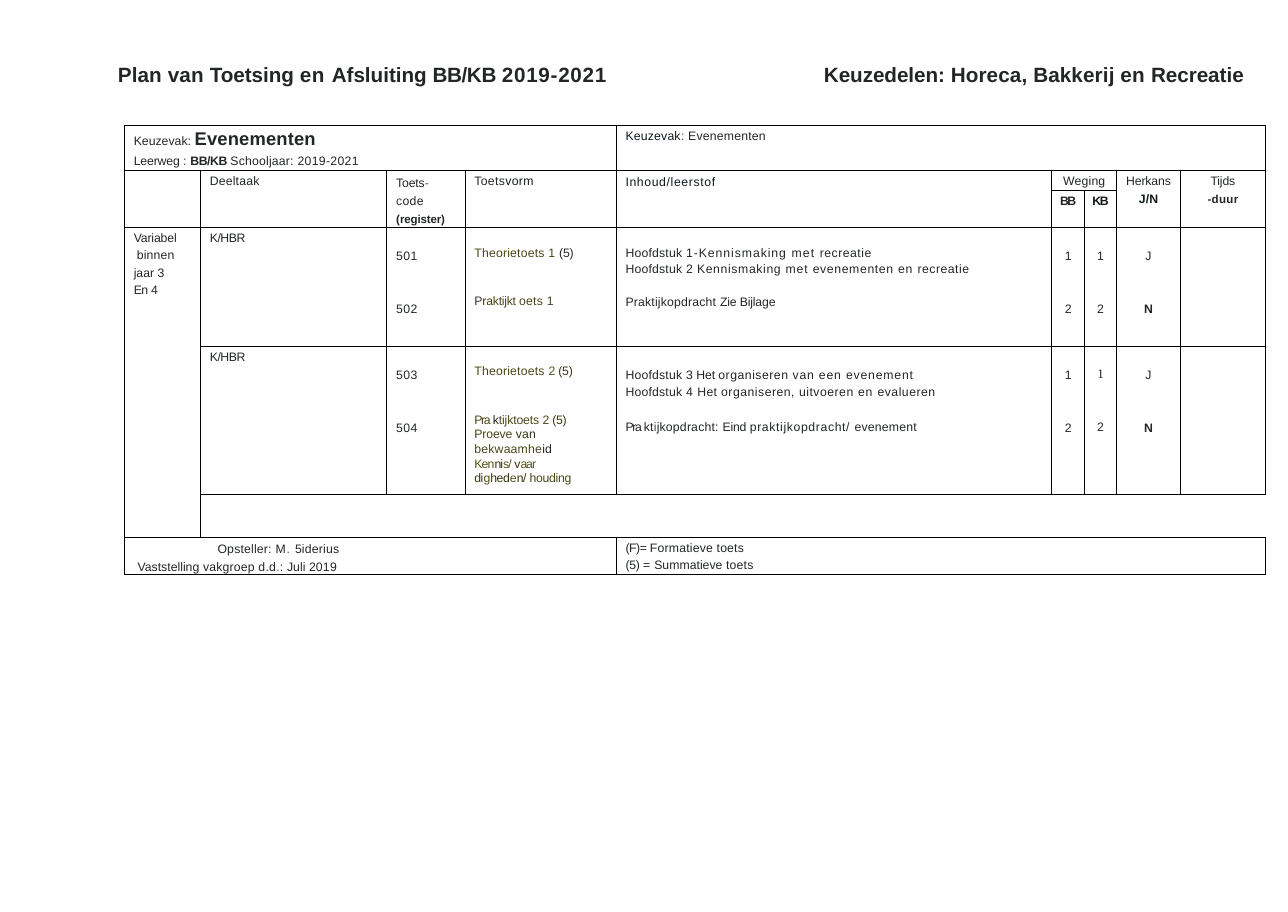
from dataclasses import dataclass

from lxml import etree
from pptx import Presentation
from pptx.dml.color import RGBColor
from pptx.enum import text
from pptx.oxml import ns
from pptx.util import Pt

INK, OLIVE, MOSS, DARK = "232626", "484618", "565416", "383411"
SLATE, STEEL, GREY, NAVY = "2A3446", "3F526D", "4B4B49", "11181C"
LEFT, CENTER = text.PP_ALIGN.LEFT, text.PP_ALIGN.CENTER
COLUMNS = [49.68, 121.68, 51.12, 98.7, 284.4, 21.4, 20.88, 41.76, 55.44]
ROWS = [29.52, 12.96, 23.76, 77.76, 96.6, 28.3, 24.48]
MERGES = [(0, 0, 0, 3), (0, 4, 0, 8), (1, 5, 1, 6), (3, 0, 5, 0),
          (5, 1, 5, 8), (6, 0, 6, 3), (6, 4, 6, 8)]
MERGES += [(1, column, 2, column) for column in (0, 1, 2, 3, 4, 7, 8)]
HEAD, PAIR_TOP, PAIR_GAP = 2.2, 14.4, 25.4


@dataclass
class Span:
    words: str
    spacing: float = 0
    color: str = INK
    bold: bool = False
    size: float = 8
    font: str = "Arial"


@dataclass
class Line:
    gap: float
    spans: list
    indent: float = 0


def line(gap, *spans, indent=0):
    return Line(gap, [Span(*span) for span in spans], indent)


def rgb(color):
    return RGBColor.from_string(color)


def write_line(para, item, align=LEFT):
    para.alignment = align
    if item.indent:
        para._p.get_or_add_pPr().set("marL", str(Pt(item.indent)))
    for part in item.spans:
        span = para.add_run()
        span.text = part.words
        span.font.name, span.font.size = part.font, Pt(part.size)
        span.font.bold = part.bold
        span.font.color.rgb = rgb(part.color)
        span._r.get_or_add_rPr().set("spc", str(round(part.spacing * 100)))


def write_heading(shape, box, item):
    shape.left, shape.top, shape.width, shape.height = (Pt(side) for side in box)
    frame = shape.text_frame
    frame.word_wrap = True
    frame.auto_size = text.MSO_AUTO_SIZE.NONE
    frame.vertical_anchor = text.MSO_ANCHOR.TOP
    frame.margin_left = frame.margin_right = frame.margin_bottom = 0
    frame.margin_top = Pt(item.gap)
    para = frame.paragraphs[0]
    para.line_spacing = 1.0
    para.space_before = Pt(0)
    write_line(para, item)


def draw_headings(slide, box):
    left, top, width, height = box
    bold = (INK, True, 13.5)
    write_heading(slide.shapes.title, (left, top, 330, height), line(
        1, ("Plan van ", 0.1, *bold), ("Toetsing ", 0, *bold), ("en ", 0.5, *bold),
        ("Afsluiting ", 0, *bold), ("BB/KB ", -0.2, *bold), ("2019-2021", 0.5, *bold)))
    right_box = (left + width - 281, top, 281, height)
    write_heading(slide.shapes.add_textbox(0, 0, 0, 0), right_box, line(
        1, ("Keuzedelen: ", 0, *bold), ("Horeca, Bakkerij en ", 0.1, *bold),
        ("Recreatie", 0, *bold)))


def set_borders(cell, open_right):
    properties = cell._tc.get_or_add_tcPr()
    for side in ("lnL", "lnR", "lnT", "lnB"):
        border = etree.SubElement(properties, ns.qn("a:" + side), w=str(Pt(0.75)))
        if side == "lnR" and open_right:
            etree.SubElement(border, ns.qn("a:noFill"))
        else:
            fill = etree.SubElement(border, ns.qn("a:solidFill"))
            etree.SubElement(fill, ns.qn("a:srgbClr"), val="000000")


def fill_cell(table, row, column, lines, align=LEFT):
    """Write the lines; the first gap is the cell's top margin."""
    cell = table.cell(row, column)
    cell.margin_top = Pt(lines[0].gap)
    cell.margin_left = Pt(6 if align == LEFT else 0)
    frame = cell.text_frame
    for index, item in enumerate(lines):
        para = frame.add_paragraph() if index else frame.paragraphs[0]
        para.space_before = Pt(item.gap if index else 0)
        write_line(para, item, align)


def fill_header(table):
    fill_cell(table, 0, 0, [
        line(HEAD, ("Keuzevak: ",), ("Evenementen", 0.1, INK, True, 12)),
        line(3, ("Leerweg ", -0.1), (": ", 0.1, SLATE), ("BB/KB ", -0.3, INK, True),
             ("Schooljaar: ", 0.1), ("2019-2021", 0.2))])
    fill_cell(table, 0, 4, [line(HEAD, ("Keuzevak", 0.1, NAVY), (": ", 0.1, STEEL),
                                 ("Evenementen", 0.1))])
    fill_cell(table, 1, 1, [line(HEAD, ("Deeltaak", 0.1))])
    fill_cell(table, 1, 2, [
        line(3.4, ("Toets", -0.1), ("-", -0.1, STEEL)),
        line(2.8, ("c", 0.2, SLATE), ("ode", 0.2)),
        line(3.4, ("(", 0, INK, True, 7.5), ("register", -0.1, INK, True, 7.5),
             (")", 0, INK, True, 7.5))])
    fill_cell(table, 1, 3, [line(HEAD, ("Toets", 0.2), ("vorm", 0.2, NAVY))])
    fill_cell(table, 1, 4, [line(2.7, ("Inhoud/leerstof", 0.4, NAVY))])
    fill_cell(table, 1, 5, [line(HEAD, ("Weging", 0.1))], CENTER)
    fill_cell(table, 2, 5, [line(HEAD, ("BB", -1, INK, True))], CENTER)
    fill_cell(table, 2, 6, [line(HEAD, ("KB", -0.8, NAVY, True))], CENTER)
    fill_cell(table, 1, 7, [line(HEAD, ("Herkans", -0.1)),
                            line(2.8, ("J/N", 0.1, NAVY, True))], CENTER)
    fill_cell(table, 1, 8, [line(HEAD, ("Tijds", -0.1)),
                            line(3, ("-", 0.2, SLATE, True, 7.5),
                                 ("duur", 0.2, INK, True, 7.5))], CENTER)


def fill_tests(table):
    fill_cell(table, 3, 0, [
        line(2.6, ("Variabel", -0.1)), line(2.4, ("binnen", 0.1), indent=2),
        line(2.4, ("jaar ",), ("3", 0.1)), line(2.4, ("En ", -0.4), ("4", -0.3))])
    for row, codes in ((3, ("501", "502")), (4, ("503", "504"))):
        fill_cell(table, row, 1, [line(2.9, ("K/HBR", -0.3))])
        fill_cell(table, row, 2, [line(PAIR_TOP, (codes[0], 0.3)),
                                  line(PAIR_GAP, (codes[1], 0.3))])
        for column, first, second in ((5, "1", "2"), (6, "1", "2"), (7, "J", "N")):
            serif = (row, column) == (4, 6)
            style = (8.5, "Times New Roman") if serif else (8, "Arial")
            fill_cell(table, row, column, [
                line(13.6 if serif else PAIR_TOP, (first, 0, INK, False, *style)),
                line(PAIR_GAP, (second, 0, INK, second == "N"))], CENTER)
    fill_cell(table, 3, 3, [
        line(12.4, ("Theorietoets 1 ", 0.1, OLIVE), ("(5)", -0.1)),
        line(22.6, ("Pr", -0.2, "363633"), ("aktijkt ", -0.2, OLIVE),
             ("oets ", 0.1, OLIVE), ("1", -0.6, OLIVE))])
    fill_cell(table, 3, 4, [
        line(12.4, ("Hoofdstuk ", 0.1), ("1-Kennismaking ", 0.6), ("met ", 0.7),
             ("recreatie", 0.3)),
        line(1.3, ("Hoofdstuk ", 0.1), ("2 ", 0.2), ("Kennismaking ", 0.4), ("met ", 0.5),
             ("evenementen ", 0.4), ("en ", 0.5), ("recreatie", 0.3)),
        line(12.8, ("Praktijkopdracht ", 0.1), ("Zie ", -0.2), ("Bijlage", -0.1))])
    fill_cell(table, 4, 3, [
        line(11.7, ("Theorietoets ", 0.1, OLIVE), ("2 ", -0.3, MOSS), ("(5)", -0.1, DARK)),
        line(22.8, ("Pra ", -0.9, OLIVE), ("k", -0.1), ("tijktoets ", -0.1, OLIVE),
             ("2 ", -0.3, OLIVE), ("(5)", -0.2, DARK)),
        line(0.6, ("Proeve ", -0.1, OLIVE), ("van", 0.1, DARK)),
        line(0.6, ("bekwaamhe", 0.1, OLIVE), ("id", 0.1)),
        line(0.6, ("Ken", -0.6, MOSS), ("ni", -0.6, DARK), ("s/ ", -0.6, MOSS),
             ("v", -0.7, DARK), ("aar", -0.7, MOSS)),
        line(0.6, ("di", -0.3, DARK), ("g", -0.3, MOSS), ("hed", -0.3, DARK),
             ("e", -0.3, MOSS), ("n/ ", -0.3, DARK), ("houding", -0.2, OLIVE))])
    fill_cell(table, 4, 4, [
        line(14.3, ("Hoofdstuk ", 0.1), ("3 ",), ("Het ", -0.1), ("organiseren ", 0.3),
             ("van een evenement", 0.5)),
        line(1.9, ("Hoofdstuk ", 0.1), ("4 ", 0.3), ("Het ", 0.2),
             ("organiseren, uitvoeren ", 0.3), ("en ", 0.5), ("evalueren", 0.3)),
        line(14, ("Pra ", -0.9), ("kt", 0.1), ("i", 0.1, GREY), ("jkopdracht: ", 0.1),
             ("Eind ", -0.1), ("praktijkopdracht/ ", 0.4), ("evenement", 0.1))])


def fill_footer(table):
    fill_cell(table, 6, 0, [
        line(3.5, ("Opsteller: ", 0.1), ("M", 0.5), (". ", 0.5, GREY), ("5iderius", 0.1),
             indent=54.7),
        line(2.5, ("Vaststelling ",), ("vakgroep d.d", 0.1), (".", 0.1, GREY),
             (": ", 0.1), ("Juli ",), ("2019", 0.1), indent=2.5)])
    fill_cell(table, 6, 4, [
        line(2.6, ("(F)= ", -0.3), ("Formatieve toets", 0.1)),
        line(1.9, ("(5) ", -0.2), ("= ", 0.2), ("Summatieve ",), ("toets", 0.1))])


def draw_plan(slide, left, top):
    box = (left, top, sum(COLUMNS), sum(ROWS))
    table = slide.shapes.add_table(len(ROWS), len(COLUMNS), *(Pt(side) for side in box)).table
    table.first_row = table.horz_banding = False
    for column, width in zip(table.columns, COLUMNS):
        column.width = Pt(width)
    for index, height in enumerate(ROWS):
        table.rows[index].height = Pt(height)
        for column in range(len(COLUMNS)):
            cell = table.cell(index, column)
            cell.margin_left = cell.margin_right = cell.margin_top = cell.margin_bottom = 0
            set_borders(cell, open_right=index == 5 and column > 0)
            cell.fill.background()
    for row, column, last_row, last_column in MERGES:
        table.cell(row, column).merge(table.cell(last_row, last_column))
    fill_header(table)
    fill_tests(table)
    fill_footer(table)


def main():
    deck = Presentation()
    deck.slide_width, deck.slide_height = Pt(841), Pt(595.5)
    slide = deck.slides.add_slide(deck.slide_layouts[5])
    draw_headings(slide, (77, 39.2, 742, 18))
    draw_plan(slide, 81.36, 82.08)
    deck.save("out.pptx")


if __name__ == "__main__":
    main()
